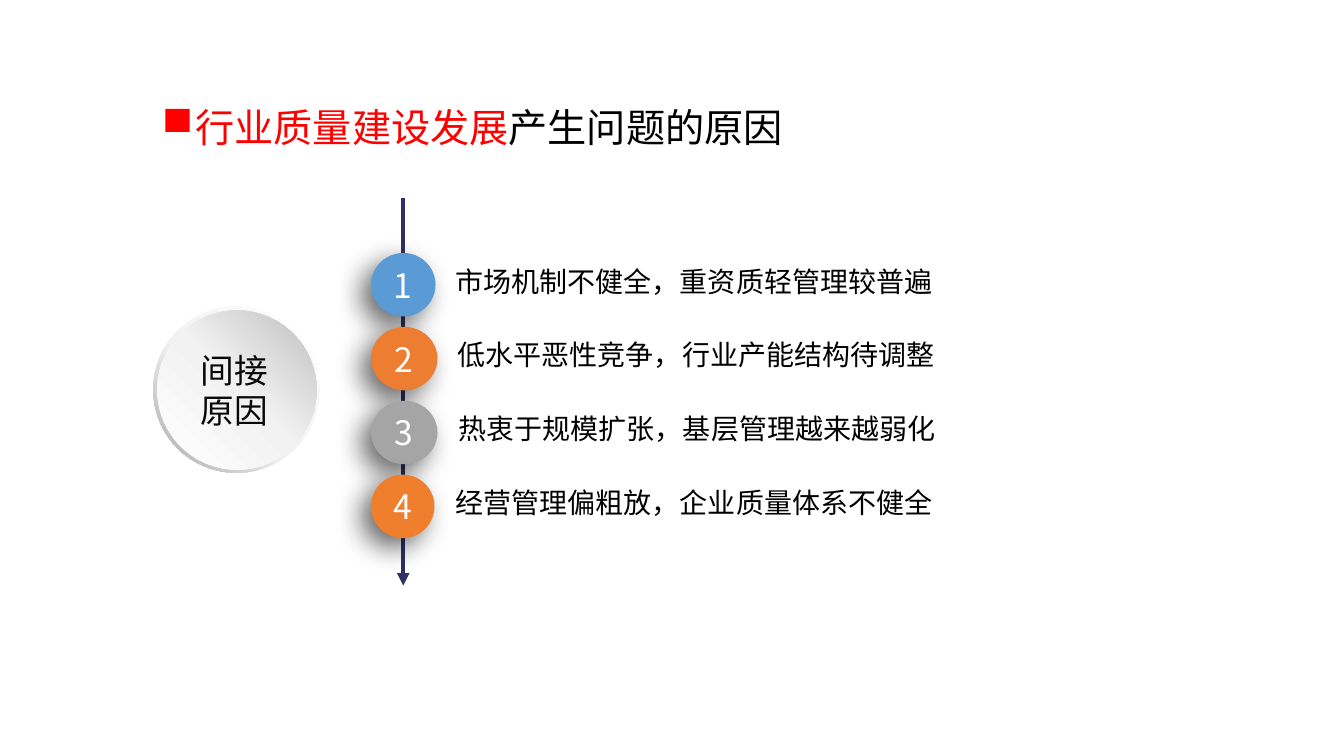
"""Builds a slide on the indirect causes of quality problems in the industry."""
from lxml.etree import SubElement as Sub
from pptx import Presentation
from pptx.dml.color import RGBColor
from pptx.enum.shapes import MSO_CONNECTOR as Link, MSO_SHAPE as Kind
from pptx.enum.text import MSO_ANCHOR as Anchor, PP_ALIGN as Align
from pptx.oxml.ns import qn
from pptx.util import Inches, Pt

FONT = "Noto Sans CJK SC"
TITLE = [("行业质量建设发展", "FF0000"), ("产生问题的原因", "000000")]
TOPIC = ["间接", "原因"]
CAUSES = [
    ("市场机制不健全，重资质轻管理较普遍", "5B9BD5", 0.64, 4.42),
    ("低水平恶性竞争，行业产能结构待调整", "ED7D31", 0.66, 4.44),
    ("热衷于规模扩张，基层管理越来越弱化", "A5A5A5", 0.66, 4.45),
    ("经营管理偏粗放，企业质量体系不健全", "EF7E2D", 0.63, 4.42),
]
RING = [(0, "FFFFFF"), (55, "F2F2F2"), (100, "A6A6A6")]
DISC = [(0, "FFFFFF"), (51, "F2F2F2"), (100, "BFBFBF")]
AXIS_X, AXIS_TOP, AXIS_END = 4, 1.96, 5.81
BALL_X, BALL_TOP, BALL_H, PITCH = 3.68, 2.51, 0.63, 0.733
RIGHT = 11.16


def paint(target, color):
    target.rgb = RGBColor.from_string(color)


def add_run(par, text, size, color):
    run = par.add_run()
    run.text = text
    run.font.size = Pt(size)
    paint(run.font.color, color)
    run.font.name = FONT
    Sub(run.font._element, qn("a:ea"), typeface=FONT)


def add_shape(kind, box, color=None):
    shape = slide.shapes.add_shape(kind, *map(Inches, box))
    shape.shadow.inherit = False
    shape.line.fill.background()
    if color:
        shape.fill.solid()
        paint(shape.fill.fore_color, color)
    return shape


def add_box(box):
    frame = slide.shapes.add_textbox(*map(Inches, box)).text_frame
    frame.word_wrap = True
    return frame


def shade(shape, stops, angle):
    grad = Sub(shape._element.spPr, qn("a:gradFill"), rotWithShape="1")
    items = Sub(grad, qn("a:gsLst"))
    for place, color in stops:
        stop = Sub(items, qn("a:gs"), pos=str(place * 1000))
        Sub(stop, qn("a:srgbClr"), val=color)
    Sub(grad, qn("a:lin"), ang=str(angle * 60000), scaled="0")
    shape._element.spPr.find(qn("a:prstGeom")).addnext(grad)


def cast(shape):
    effects = shape._element.spPr.find(qn("a:effectLst"))
    drop = Sub(effects, qn("a:outerShdw"), blurRad=str(Pt(20)), dist=str(Pt(10)),
               dir=str(135 * 60000), algn="tr", rotWithShape="0")
    tint = Sub(drop, qn("a:srgbClr"), val="000000")
    Sub(tint, qn("a:alpha"), val="60000")


deck = Presentation()
deck.slide_width, deck.slide_height = Inches(13.33), Inches(7.5)
slide = deck.slides.add_slide(deck.slide_layouts[6])

add_shape(Kind.RECTANGLE, (1.64, 1.08, 0.24, 0.23), "FF0000")
head = add_box((1.84, 0.84, 6.63, 0.67)).paragraphs[0]
head.line_spacing = 1.3
for text, color in TITLE:
    add_run(head, text, 28, color)

axis = slide.shapes.add_connector(
    Link.STRAIGHT, *map(Inches, (AXIS_X, AXIS_TOP, AXIS_X, AXIS_END)))
paint(axis.line.color, "313065")
axis.line.width = Pt(3)
Sub(axis.line._get_or_add_ln(), qn("a:tailEnd"), type="triangle")
Sub(axis._element.spPr, qn("a:effectLst"))

ring = add_shape(Kind.DONUT, (1.52, 3.04, 1.65, 1.65))
ring.adjustments[0] = 0.049
shade(ring, RING, 135)
shade(add_shape(Kind.OVAL, (1.56, 3.08, 1.58, 1.58)), DISC, 315)
topic = add_box((1.56, 3.47, 1.53, 0.81))
topic.margin_left = topic.margin_right = topic.margin_top = topic.margin_bottom = 0
for i, text in enumerate(TOPIC):
    par = topic.add_paragraph() if i else topic.paragraphs[0]
    par.alignment = Align.CENTER
    add_run(par, text, 24, "080808")

for i, (text, color, width, left) in enumerate(CAUSES):
    top = BALL_TOP + i * PITCH
    ball = add_shape(Kind.OVAL, (BALL_X, top, width, BALL_H), color)
    cast(ball)
    ball.text_frame.vertical_anchor = Anchor.MIDDLE
    mark = ball.text_frame.paragraphs[0]
    mark.alignment = Align.CENTER
    add_run(mark, str(i + 1), 24, "FFFFFF")
    cause = add_box((left, top + 0.06, RIGHT - left, 0.44))
    add_run(cause.paragraphs[0], text, 20, "000000")

deck.save("out.pptx")
